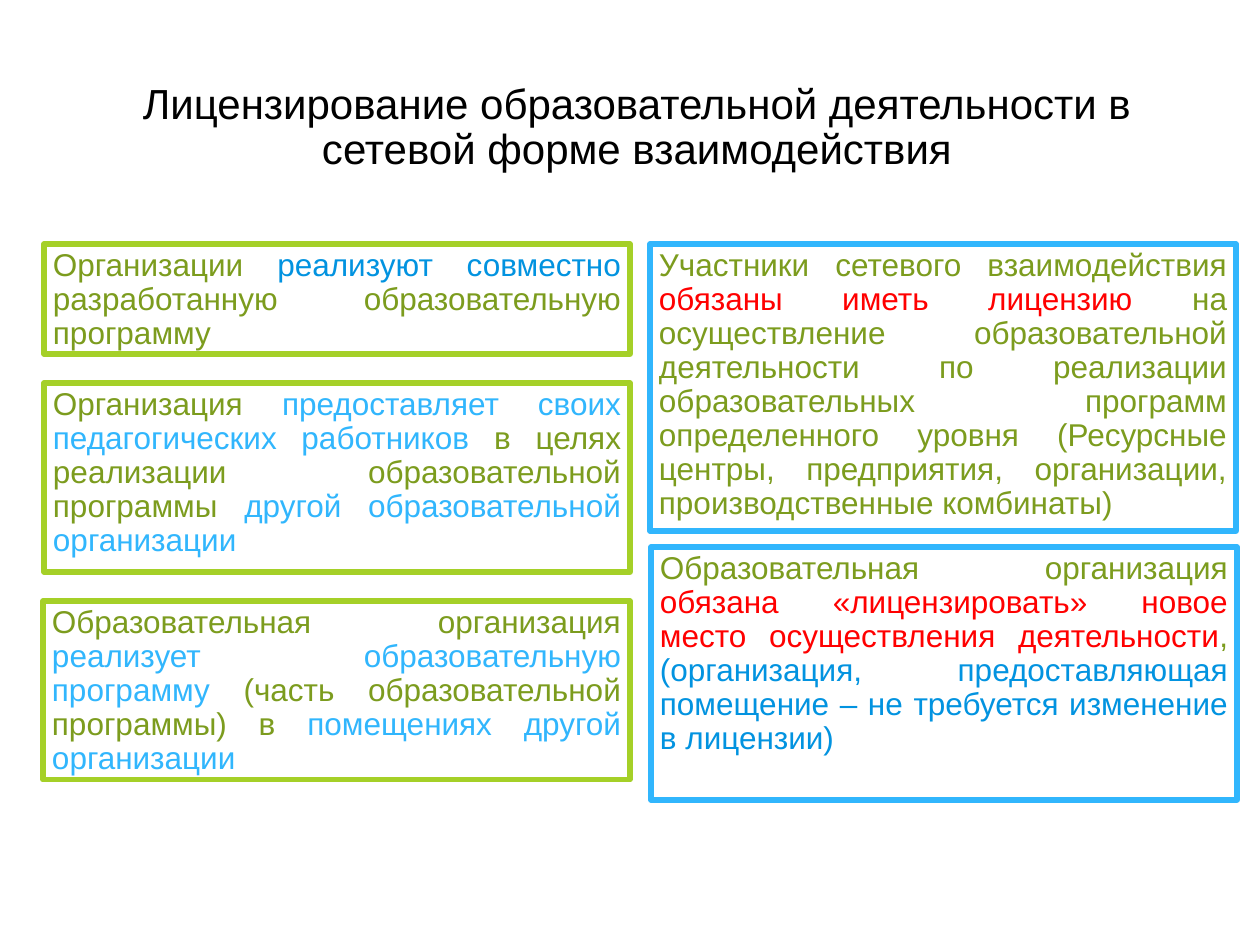
from pptx import Presentation, util as u
from pptx.dml.color import RGBColor
from pptx.enum import shapes, text

BLACK = RGBColor(0x00, 0x00, 0x00)
WHITE = RGBColor(0xFF, 0xFF, 0xFF)
LIME = RGBColor(0xA5, 0xD0, 0x28)
OLIVE = RGBColor(0x7C, 0x9C, 0x1E)
SKY = RGBColor(0x31, 0xB6, 0xFD)
BLUE = RGBColor(0x02, 0x93, 0xE0)
RED = RGBColor(0xFF, 0x00, 0x00)


def px(n):
    return u.Emu(round(n * 914400 / 126))


class Deck:
    font = "Arial"
    inset = (9, 5)
    border = 3
    leading = 0.9

    def __init__(self, width, height):
        self.prs = Presentation()
        self.prs.slide_width = px(width)
        self.prs.slide_height = px(height)
        self.slide = self.prs.slides.add_slide(self.prs.slide_layouts[6])

    def label(self, shape, runs, size, align, anchor):
        frame = shape.text_frame
        frame.word_wrap = True
        frame.vertical_anchor = anchor
        side, edge = map(px, self.inset)
        frame.margin_left = frame.margin_right = side
        frame.margin_top = frame.margin_bottom = edge
        para = frame.paragraphs[0]
        para.alignment = align
        para.line_spacing = self.leading
        for words, color in runs:
            run = para.add_run()
            run.text = words
            run.font.name = self.font
            run.font.size = u.Pt(size)
            run.font.color.rgb = color

    def title(self, area, words):
        box = self.slide.shapes.add_textbox(*map(px, area))
        self.label(box, [(words, BLACK)], 24,
                   text.PP_ALIGN.CENTER, text.MSO_ANCHOR.MIDDLE)

    def card(self, area, color, runs):
        box = self.slide.shapes.add_shape(
            shapes.MSO_SHAPE.RECTANGLE, *map(px, area))
        box.shadow.inherit = False
        box.fill.solid()
        box.fill.fore_color.rgb = WHITE
        box.line.color.rgb = color
        box.line.width = u.Pt(self.border)
        self.label(box, runs, 18, text.PP_ALIGN.JUSTIFY, text.MSO_ANCHOR.TOP)


CARDS = [
    ((44, 244, 586, 110), LIME, [
        ("Организации ", OLIVE),
        ("реализуют совместно ", BLUE),
        ("разработанную образовательную программу", OLIVE)]),
    ((44, 383, 586, 189), LIME, [
        ("Организация ", OLIVE),
        ("предоставляет своих педагогических работников ", SKY),
        ("в целях реализации образовательной программы ", OLIVE),
        ("другой образовательной организации", SKY)]),
    ((43, 601, 587, 179), LIME, [
        ("Образовательная организация ", OLIVE),
        ("реализует образовательную программу ", SKY),
        ("(часть образовательной программы) в ", OLIVE),
        ("помещениях другой организации", SKY)]),
    ((650, 244, 586, 287), SKY, [
        ("Участники сетевого взаимодействия ", OLIVE),
        ("обязаны иметь лицензию ", RED),
        ("на осуществление образовательной деятельности по реализации "
         "образовательных программ определенного уровня (Ресурсные центры, "
         "предприятия, организации, производственные комбинаты)", OLIVE)]),
    ((651, 547, 586, 253), SKY, [
        ("Образовательная организация ", OLIVE),
        ("обязана «лицензировать» новое место осуществления деятельности", RED),
        (", ", OLIVE),
        ("(организация, предоставляющая помещение – не требуется "
         "изменение в лицензии)", BLUE)]),
]


def main():
    deck = Deck(1260, 945)
    deck.title((94, 37, 1086, 183),
               "Лицензирование образовательной деятельности "
               "в сетевой форме взаимодействия")
    for area, color, runs in CARDS:
        deck.card(area, color, runs)
    deck.prs.save("out.pptx")


if __name__ == "__main__":
    main()
